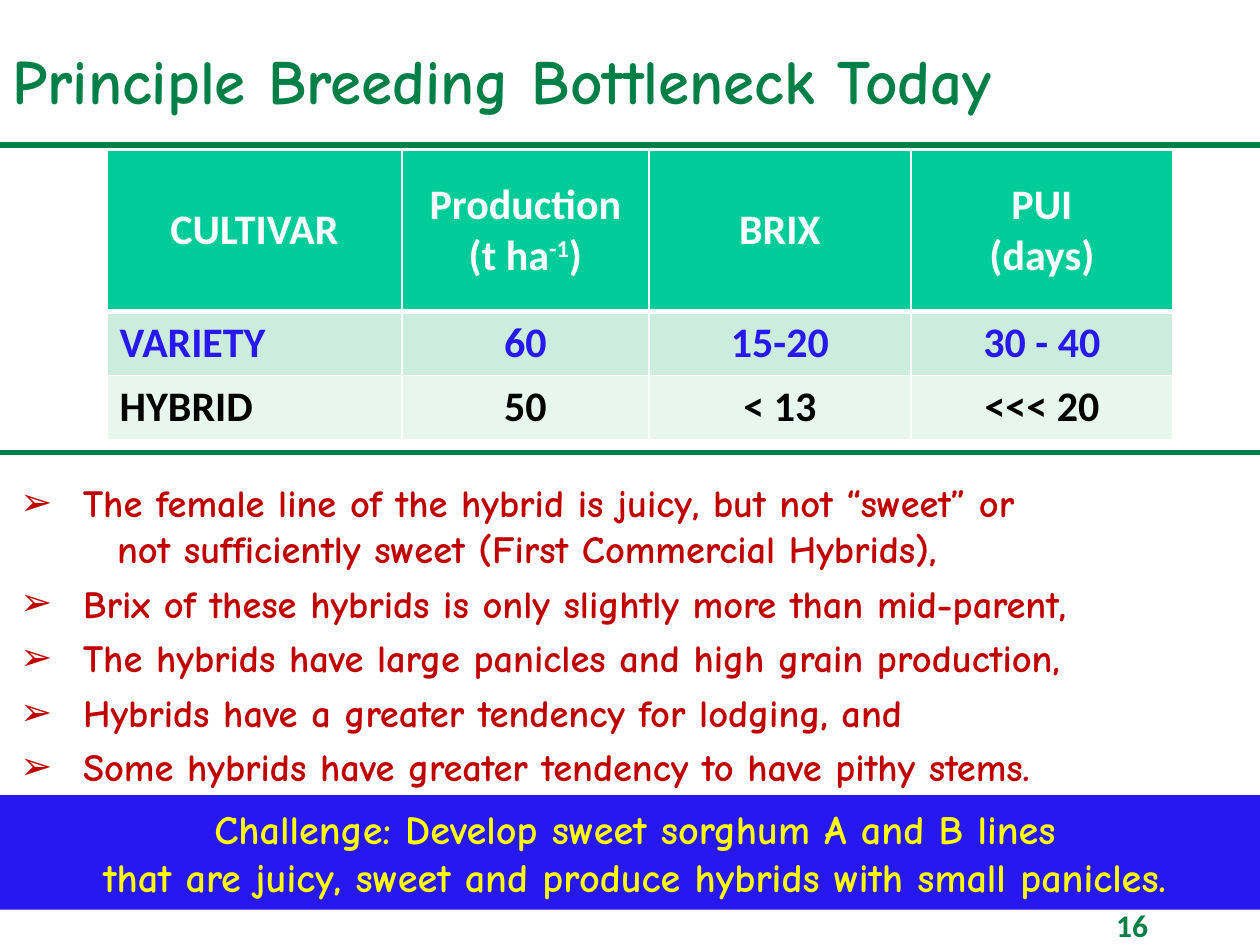
from dataclasses import dataclass

from lxml import etree
from pptx import Presentation
from pptx import util as u
from pptx.dml.color import RGBColor
from pptx.enum import shapes, text
from pptx.oxml.ns import qn

COLORS = {
    "green": "008047", "blue": "2718F0", "red": "C00000", "yellow": "FFFF00",
    "white": "FFFFFF", "black": "000000", "header": "00CC99",
    "variety": "CCECDE", "hybrid": "E7F6EF",
}
HAND, PLAIN = "Comic Neue", "Calibri"
ALIGN = text.PP_ALIGN


@dataclass
class Row:
    cells: list[str]
    fill: str
    color: str
    height: float
    bottom_border: int = 1


@dataclass
class Point:
    words: str
    indent: float = 0.5
    bullet: bool = True
    before: float = 4.8


ROWS = [
    Row(["CULTIVAR", "Production\n(t ha^-1^)", "BRIX", "PUI\n(days)"],
        "header", "white", 1.28, 3),
    Row(["VARIETY", "60", "15-20", "30 - 40"], "variety", "blue", 0.51),
    Row(["HYBRID", "50", "< 13", "<<< 20"], "hybrid", "black", 0.51),
]
COLUMN_WIDTHS = [2.34, 1.96, 2.08, 2.08]
POINTS = [
    Point("The female line of the hybrid is juicy, but not “sweet” or", before=0),
    Point("not sufficiently sweet (First Commercial Hybrids),", 0.77, False, 0),
    Point("Brix of these hybrids is only slightly more than mid-parent,"),
    Point("The hybrids have large panicles and high grain production,"),
    Point("Hybrids have a greater tendency for lodging, and"),
    Point("Some hybrids have greater tendency to have pithy stems."),
]
CHALLENGE = [
    "Challenge: Develop sweet sorghum A and B lines",
    "that are juicy, sweet and produce hybrids with small panicles.",
]


def rgb(name: str) -> RGBColor:
    return RGBColor.from_string(COLORS[name])


def format_paragraph(paragraph, font: str, size: float, color: str, align=ALIGN.LEFT) -> None:
    paragraph.alignment = align
    paragraph.font.name = font
    paragraph.font.size = u.Pt(size)
    paragraph.font.bold = True
    paragraph.font.color.rgb = rgb(color)


def place(shape, left: float, top: float, width: float, height: float) -> None:
    shape.left, shape.top = u.Inches(left), u.Inches(top)
    shape.width, shape.height = u.Inches(width), u.Inches(height)


def prepare_frame(frame, anchor=text.MSO_ANCHOR.TOP) -> None:
    frame.auto_size = text.MSO_AUTO_SIZE.NONE
    frame.word_wrap = True
    frame.vertical_anchor = anchor


def add_rule(slide, top: float) -> None:
    rule = slide.shapes.add_connector(
        shapes.MSO_CONNECTOR.STRAIGHT, 0, u.Inches(top), u.Inches(10), u.Inches(top))
    rule.line.color.rgb = rgb("green")
    rule.line.width = u.Pt(3)
    etree.SubElement(rule._element.spPr, qn("a:effectLst"))


def add_borders(cell, bottom: int) -> None:
    properties = cell._tc.get_or_add_tcPr()
    for side, points in (("L", 1), ("R", 1), ("T", 1), ("B", bottom)):
        border = etree.SubElement(properties, qn(f"a:ln{side}"), w=str(u.Pt(points)))
        fill = etree.SubElement(border, qn("a:solidFill"))
        etree.SubElement(fill, qn("a:srgbClr"), val=COLORS["white"])


def fill_cell(cell, words: str, row: Row, align) -> None:
    add_borders(cell, row.bottom_border)
    cell.fill.solid()
    cell.fill.fore_color.rgb = rgb(row.fill)
    if row.fill == "header":
        cell.vertical_anchor = text.MSO_ANCHOR.MIDDLE
    for i, line in enumerate(words.split("\n")):
        paragraph = cell.text_frame.paragraphs[0] if i == 0 else cell.text_frame.add_paragraph()
        format_paragraph(paragraph, PLAIN, 24, row.color, align)
        for j, part in enumerate(line.split("^")):
            run = paragraph.add_run()
            run.text = part
            if j % 2:
                run._r.get_or_add_rPr().set("baseline", "30000")


def add_cultivars(slide) -> None:
    cultivars = slide.shapes.add_table(
        len(ROWS), len(COLUMN_WIDTHS), u.Inches(0.85), u.Inches(1.19),
        u.Inches(sum(COLUMN_WIDTHS)), u.Inches(sum(row.height for row in ROWS))).table
    for column, width in zip(cultivars.columns, COLUMN_WIDTHS):
        column.width = u.Inches(width)
    for r, row in enumerate(ROWS):
        cultivars.rows[r].height = u.Inches(row.height)
        for c, words in enumerate(row.cells):
            align = ALIGN.LEFT if r and c == 0 else ALIGN.CENTER
            fill_cell(cultivars.cell(r, c), words, row, align)


def add_points(body) -> None:
    place(body, 0.06, 3.75, 9.94, 2.59)
    prepare_frame(body.text_frame)
    for i, point in enumerate(POINTS):
        paragraph = body.text_frame.paragraphs[0] if i == 0 else body.text_frame.add_paragraph()
        paragraph.text = point.words
        properties = paragraph._p.get_or_add_pPr()
        properties.set("marL", str(u.Inches(point.indent)))
        properties.set("indent", str(u.Inches(-point.indent if point.bullet else 0)))
        if point.bullet:
            etree.SubElement(properties, qn("a:buChar"), char="➢")
        else:
            etree.SubElement(properties, qn("a:buNone"))
        paragraph.space_before = u.Pt(point.before)
        format_paragraph(paragraph, HAND, 22, "red")


def add_challenge(slide) -> None:
    banner = slide.shapes.add_shape(
        shapes.MSO_SHAPE.RECTANGLE, u.Inches(-0.35), u.Inches(6.31),
        u.Inches(10.79), u.Inches(0.91))
    banner.shadow.inherit = False
    banner.fill.solid()
    banner.fill.fore_color.rgb = rgb("blue")
    banner.line.fill.background()
    prepare_frame(banner.text_frame, text.MSO_ANCHOR.MIDDLE)
    banner.text_frame.text = "\n".join(CHALLENGE)
    for paragraph in banner.text_frame.paragraphs:
        format_paragraph(paragraph, HAND, 23, "yellow", ALIGN.CENTER)


def add_page_number(slide) -> None:
    page = slide.shapes.add_textbox(
        u.Inches(7.13), u.Inches(7.14), u.Inches(2.08), u.Inches(0.5))
    prepare_frame(page.text_frame)
    page.text_frame.text = "16"
    format_paragraph(page.text_frame.paragraphs[0], PLAIN, 18, "green", ALIGN.RIGHT)


def main() -> None:
    deck = Presentation()
    deck.slide_width, deck.slide_height = u.Inches(10), u.Inches(7.5)
    slide = deck.slides.add_slide(deck.slide_layouts[1])

    title = slide.shapes.title
    place(title, 0, 0.28, 9.73, 0.71)
    prepare_frame(title.text_frame)
    title.text_frame.text = "Principle Breeding Bottleneck Today"
    format_paragraph(title.text_frame.paragraphs[0], HAND, 36, "green")

    add_rule(slide, 1.15)
    add_cultivars(slide)
    add_rule(slide, 3.59)
    add_points(slide.placeholders[1])
    add_challenge(slide)
    add_page_number(slide)
    deck.save("out.pptx")


if __name__ == "__main__":
    main()
